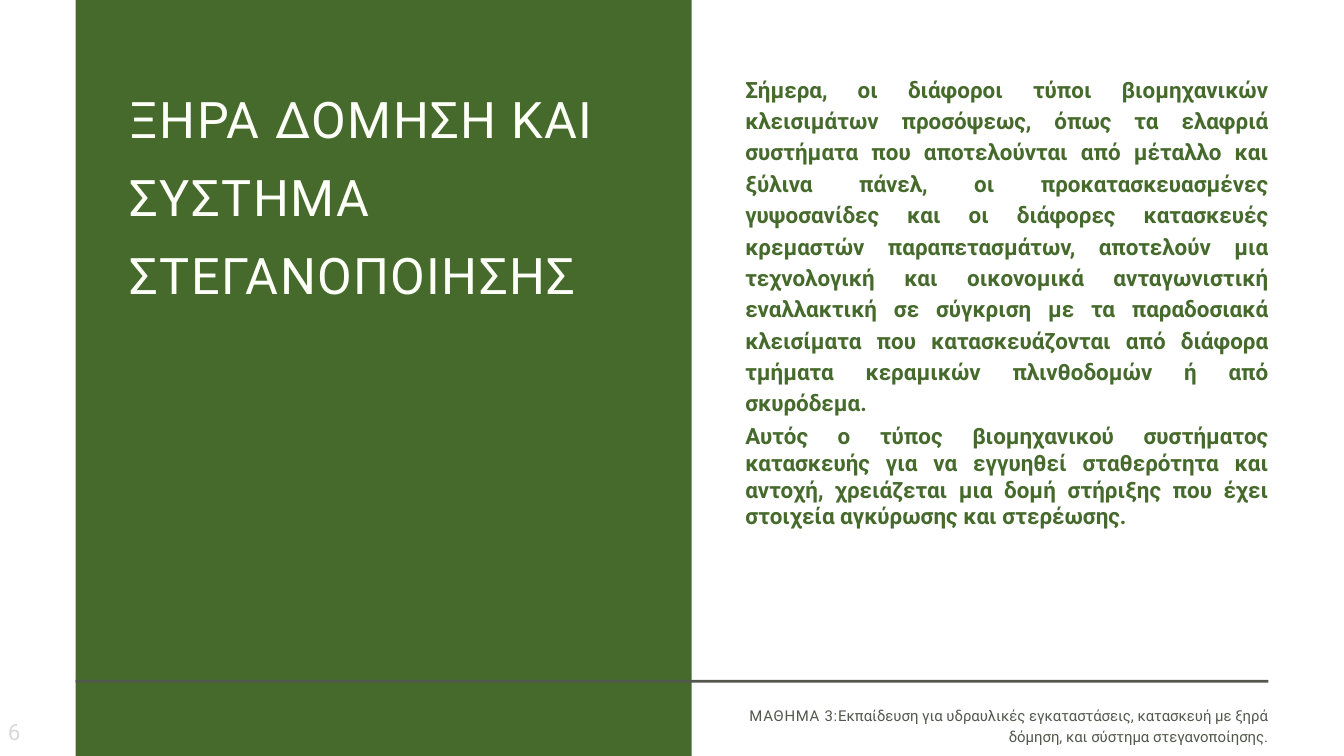
from pptx import Presentation
from pptx.dml.color import RGBColor as Rgb
from pptx.enum.shapes import MSO_SHAPE as Shape
from pptx.enum.text import MSO_ANCHOR as Anchor, PP_ALIGN as Align
from pptx.util import Pt

COLORS = {
    "green": "456A2C",
    "gray": "52584D",
    "cream": "FEFFF8",
    "pale": "D9D9D9",
}
FONT = "Roboto"


def add_span(para, text, size=24, color="green", bold=False, tracking=0):
    """Add formatted text to a paragraph; tracking is in points."""
    span = para.add_run()
    span.text = text
    font = span.font
    font.name, font.size, font.bold = FONT, Pt(size), bold
    font.color.rgb = Rgb.from_string(COLORS[color])
    if tracking:
        font._element.set("spc", str(round(tracking * 100)))


class SlideBuilder:
    def __init__(self, page):
        self.page = page

    def block(self, left, top, width, height, color):
        box = self.page.shapes.add_shape(
            Shape.RECTANGLE, Pt(left), Pt(top), Pt(width), Pt(height))
        box.shadow.inherit = False
        box.fill.solid()
        box.fill.fore_color.rgb = Rgb.from_string(COLORS[color])
        box.line.fill.background()

    def frame(self, left, top, width, height, anchor=Anchor.TOP):
        box = self.page.shapes.add_textbox(
            Pt(left), Pt(top), Pt(width), Pt(height))
        frame = box.text_frame
        frame.word_wrap = True
        frame.vertical_anchor = anchor
        frame.margin_left = frame.margin_right = 0
        frame.margin_top = frame.margin_bottom = 0
        return frame

    def format(self, para, align=Align.LEFT, leading=None, after=0):
        para.alignment = align
        para.space_after = Pt(after)
        if leading:
            para.line_spacing = Pt(leading)
        return para


def main():
    deck = Presentation()
    deck.slide_width, deck.slide_height = Pt(1440), Pt(810)
    page = deck.slides.add_slide(deck.slide_layouts[6])
    builder = SlideBuilder(page)

    # Green panel and footer rule
    builder.block(81, -26.5, 660, 862.5, "green")
    builder.block(81, 728.5, 1278, 3, "gray")

    # Title
    title = builder.frame(139, 75.5, 544.5, 250)
    para = builder.format(title.paragraphs[0], leading=83.7, after=6)
    add_span(para, "ΞΗΡΑ ΔΟΜΗΣΗ ΚΑΙ ΣΥΣΤΗΜΑ ΣΤΕΓΑΝΟΠΟΙΗΣΗΣ",
             size=54, color="cream", tracking=1.5)

    # Page number
    number = builder.frame(8.5, 769.5, 153.5, 29, Anchor.MIDDLE)
    add_span(number.paragraphs[0], "6", color="pale", tracking=1.2)

    # Body text
    body = builder.frame(798.5, 76.5, 560.5, 615)
    para = builder.format(body.paragraphs[0], Align.JUSTIFY, 33.6, 6)
    add_span(para, (
        "Σήμερα, οι διάφοροι τύποι βιομηχανικών κλεισιμάτων προσόψεως, "
        "όπως τα ελαφριά συστήματα που αποτελούνται από μέταλλο και ξύλινα "
        "πάνελ, οι προκατασκευασμένες γυψοσανίδες και οι διάφορες "
        "κατασκευές κρεμαστών παραπετασμάτων, αποτελούν μια τεχνολογική "
        "και οικονομικά ανταγωνιστική εναλλακτική σε σύγκριση με τα "
        "παραδοσιακά κλεισίματα που κατασκευάζονται από διάφορα τμήματα "
        "κεραμικών πλινθοδομών ή από σκυρόδεμα."), bold=True)
    para = builder.format(body.add_paragraph(), Align.JUSTIFY)
    add_span(para, (
        "Αυτός ο τύπος βιομηχανικού συστήματος κατασκευής για να εγγυηθεί "
        "σταθερότητα και αντοχή, χρειάζεται μια δομή στήριξης που έχει "
        "στοιχεία αγκύρωσης και στερέωσης."), bold=True)

    # Footer
    footer = builder.frame(760, 754, 599, 48)
    para = builder.format(footer.paragraphs[0], Align.RIGHT, 22.4)
    add_span(para, "ΜΑΘΗΜΑ 3:", size=16, color="gray", tracking=0.8)
    add_span(para, (
        "Εκπαίδευση για υδραυλικές εγκαταστάσεις, κατασκευή με ξηρά "
        "δόμηση, και σύστημα στεγανοποίησης."), size=16, color="gray")

    deck.save("out.pptx")


if __name__ == "__main__":
    main()
